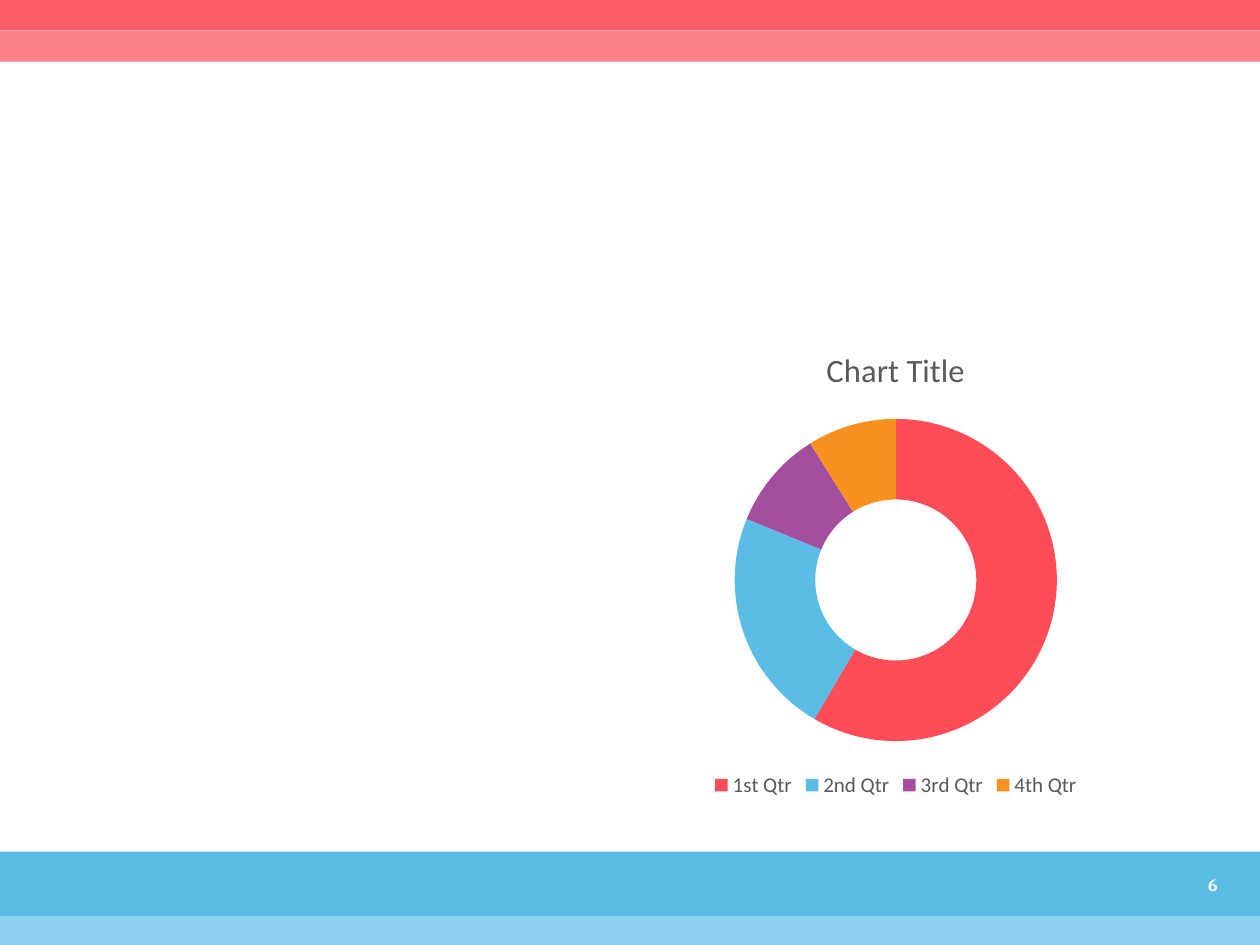
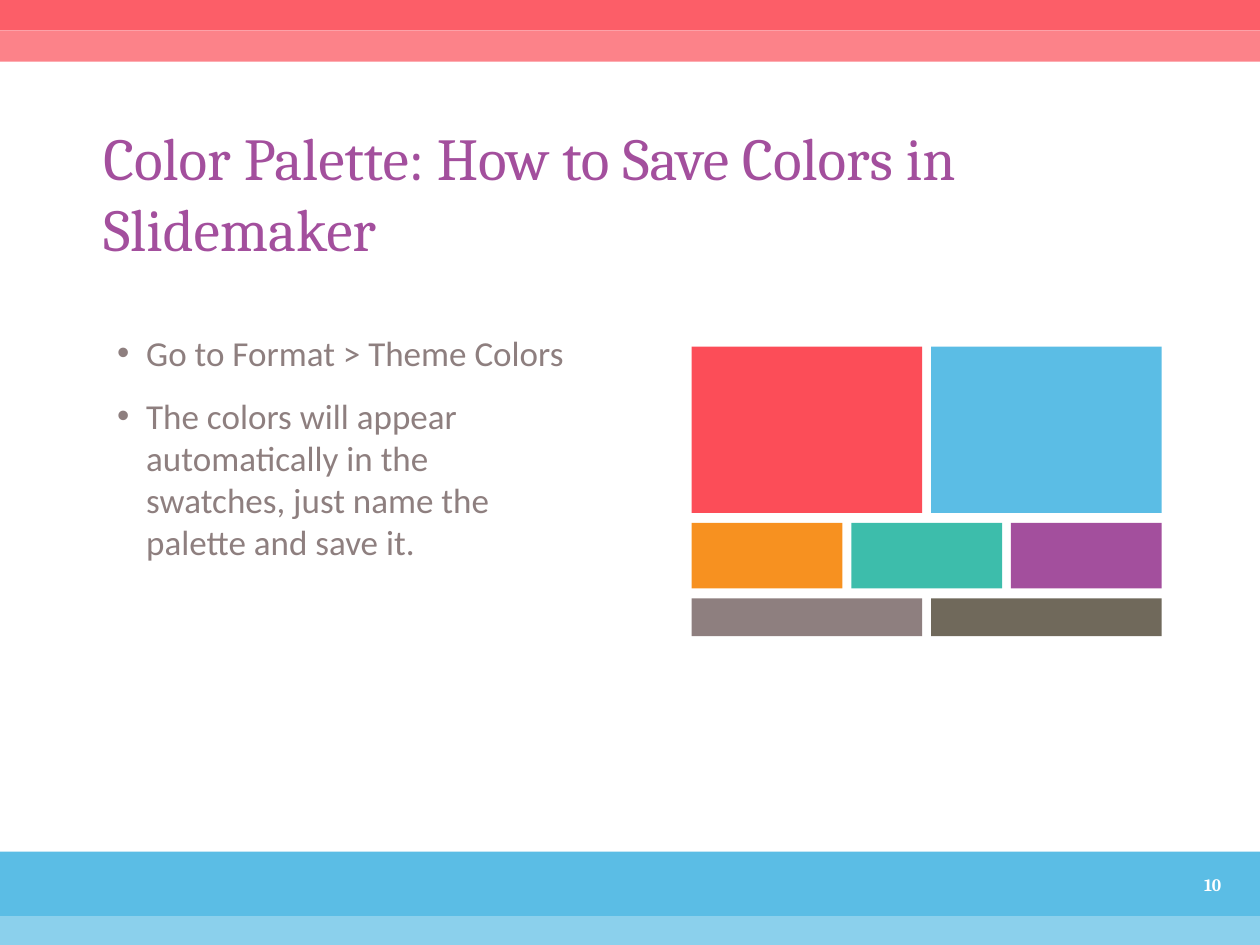
from lxml import etree
from pptx import Presentation
from pptx import util as u
from pptx.chart.data import CategoryChartData
from pptx.dml.color import RGBColor
from pptx.enum import chart as ch, shapes, text
from pptx.oxml.ns import qn

RED, BLUE, PURPLE = "FC4D58", "5BBDE5", "A34F9D"
ORANGE, TEAL, GREY, BROWN = "F79120", "3DBDAB", "8E7F7F", "70695B"
WHITE, DARK = "FFFFFF", "595959"
HEAD, BODY = "Cambria", "Calibri"

# top, height, colour, opacity in percent
BANDS = [
    (6.76, 0.51, BLUE, 100),
    (7.27, 0.25, BLUE, 70),
    (-0.01, 0.25, RED, 90),
    (0.24, 0.25, RED, 70),
]
QUARTERS = [
    ("1st Qtr", 59, RED),
    ("2nd Qtr", 23, BLUE),
    ("3rd Qtr", 10, PURPLE),
    ("4th Qtr", 9, ORANGE),
]
TITLE = "Color Palette: How to Save Colors in Slidemaker"
STEPS = [
    "Go to Format > Theme Colors",
    "The colors will appear automatically in the swatches, just name the palette and save it.",
]
# height of each swatch row and its colours
SWATCHES = [
    (1.32, [RED, BLUE]),
    (0.52, [ORANGE, TEAL, PURPLE]),
    (0.3, [GREY, BROWN]),
]
GRID_LEFT, GRID_TOP, GRID_WIDTH = 5.49, 2.75, 3.73
COL_GAP, ROW_GAP = 0.07, 0.08


def box(*at):
    return [u.Inches(v) for v in at]


def rgb(code):
    return RGBColor.from_string(code)


def style(font, size, name, color, bold=False):
    font.size, font.name, font.bold = u.Pt(size), name, bold
    font.color.rgb = rgb(color)


def add_rect(slide, at, color, alpha=100):
    rect = slide.shapes.add_shape(shapes.MSO_SHAPE.RECTANGLE, *box(*at))
    rect.shadow.inherit = False
    rect.line.fill.background()
    rect.fill.solid()
    rect.fill.fore_color.rgb = rgb(color)
    if alpha < 100:
        tint = rect.fill._xPr.find(".//" + qn("a:srgbClr"))
        etree.SubElement(tint, qn("a:alpha"), val=str(alpha * 1000))


def add_text(slide, at, lines, right=0):
    frame = slide.shapes.add_textbox(*box(*at)).text_frame
    frame.word_wrap = True
    frame.margin_left, frame.margin_right = 0, u.Inches(right)
    frame.text = "\n".join(lines)
    return frame


def add_frame(prs, layout, number):
    """Add a slide with the shared bands and its page number."""
    slide = prs.slides.add_slide(prs.slide_layouts[layout])
    for top, height, color, alpha in BANDS:
        add_rect(slide, (0, top, 10, height), color, alpha)
    para = add_text(slide, (9.41, 6.89, 0.43, 0.27), [str(number)]).paragraphs[0]
    para.alignment = text.PP_ALIGN.CENTER
    style(para.runs[0].font, 10, HEAD, WHITE, True)
    return slide


def add_ring(slide):
    data = CategoryChartData()
    data.categories = [name for name, _, _ in QUARTERS]
    data.add_series("Series 1", [val for _, val, _ in QUARTERS])
    chart = slide.shapes.add_chart(
        ch.XL_CHART_TYPE.DOUGHNUT, *box(5.01, 2.58, 4.2, 3.79), data).chart
    style(chart.font, 10, BODY, "000000")

    chart.has_title = True
    title = chart.chart_title.text_frame
    title.text = "Chart Title"
    style(title.paragraphs[0].runs[0].font, 18.6, BODY, DARK)
    chart.chart_title.include_in_layout = False

    chart.has_legend = True
    chart.legend.position = ch.XL_LEGEND_POSITION.BOTTOM
    chart.legend.include_in_layout = False
    style(chart.legend.font, 12, BODY, DARK)

    plot = chart.plots[0]
    plot.vary_by_categories = True
    plot._element.find(qn("c:holeSize")).set("val", "53")
    for i, (_, _, color) in enumerate(QUARTERS):
        part = plot.series[0].points[i].format
        part.fill.solid()
        part.fill.fore_color.rgb = rgb(color)
        part.line.fill.background()


def add_title(slide):
    title = slide.shapes.title
    title.left, title.top, title.width, title.height = box(0.72, 0.88, 8.5, 1.29)
    frame = title.text_frame
    frame.text = TITLE
    frame.auto_size = text.MSO_AUTO_SIZE.NONE
    frame.vertical_anchor = text.MSO_ANCHOR.MIDDLE
    para = frame.paragraphs[0]
    para.alignment = text.PP_ALIGN.LEFT
    style(para.runs[0].font, 34, HEAD, PURPLE)


def add_steps(slide):
    frame = add_text(slide, (0.72, 2.58, 3.95, 3.79), STEPS, right=0.15)
    for para in frame.paragraphs:
        para.space_before = u.Pt(12)
        style(para.runs[0].font, 20, BODY, GREY)
        props = para._p.get_or_add_pPr()
        props.set("marL", str(u.Inches(0.44)))
        props.set("indent", str(u.Inches(-0.23)))
        etree.SubElement(props, qn("a:buFont"), typeface="Arial")
        etree.SubElement(props, qn("a:buChar"), char="•")


def add_swatches(slide):
    top = GRID_TOP
    for height, colors in SWATCHES:
        width = (GRID_WIDTH + COL_GAP) / len(colors) - COL_GAP
        for i, color in enumerate(colors):
            left = GRID_LEFT + i * (width + COL_GAP)
            add_rect(slide, (left, top, width, height), color)
        top += height + ROW_GAP


def main():
    prs = Presentation()
    prs.slide_width, prs.slide_height = box(10, 7.5)

    add_ring(add_frame(prs, 6, 6))

    palette = add_frame(prs, 5, 10)
    add_title(palette)
    add_steps(palette)
    add_swatches(palette)

    prs.save("out.pptx")


if __name__ == "__main__":
    main()
